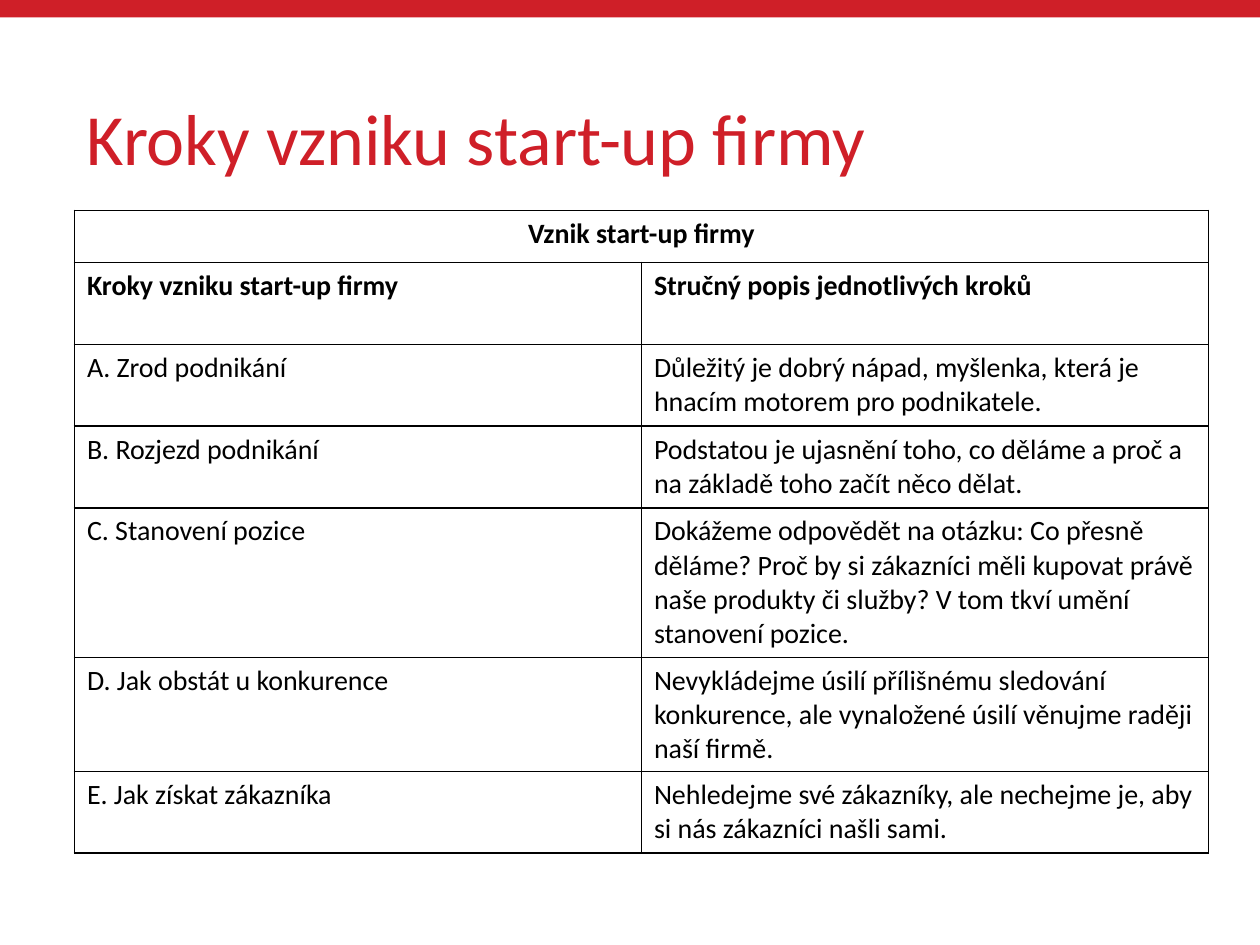
from lxml.etree import SubElement
from pptx import Presentation
from pptx.dml.color import RGBColor
from pptx.enum.shapes import MSO_SHAPE
from pptx.enum.text import MSO_ANCHOR, PP_ALIGN
from pptx.oxml.ns import qn
from pptx.util import Cm, Pt

RED = RGBColor(0xCF, 0x1F, 0x28)
BLACK = RGBColor(0, 0, 0)
WHITE = RGBColor(0xFF, 0xFF, 0xFF)

TABLE_TITLE = "Vznik start-up firmy"
HEADINGS = ("Kroky vzniku start-up firmy", "Stručný popis jednotlivých kroků")
STEPS = [
    ("A. Zrod podnikání",
     "Důležitý je dobrý nápad, myšlenka, která je hnacím motorem pro podnikatele."),
    ("B. Rozjezd podnikání",
     "Podstatou je ujasnění toho, co děláme a proč a na základě toho začít něco dělat."),
    ("C. Stanovení pozice",
     "Dokážeme odpovědět na otázku: Co přesně děláme? Proč by si zákazníci měli kupovat "
     "právě naše produkty či služby? V tom tkví umění stanovení pozice."),
    ("D. Jak obstát u konkurence",
     "Nevykládejme úsilí přílišnému sledování konkurence, ale vynaložené úsilí věnujme "
     "raději naší firmě."),
    ("E. Jak získat zákazníka",
     "Nehledejme své zákazníky, ale nechejme je, aby si nás zákazníci našli sami."),
]
ROW_HEIGHTS = [1.05] + [1.65] * 3 + [3.01, 2.3, 1.65]


def write(frame, text, size=16, color=BLACK, bold=False,
          align=PP_ALIGN.LEFT, spacing=None):
    paragraph = frame.paragraphs[0]
    paragraph.alignment = align
    if spacing:
        paragraph.line_spacing = spacing
    run = paragraph.add_run()
    run.text = text
    run.font.name = "Calibri"
    run.font.size = Pt(size)
    run.font.bold = bold
    run.font.color.rgb = color


class StartupSlide:
    def __init__(self, deck, accent=RED, border=BLACK):
        self.slide = deck.slides.add_slide(deck.slide_layouts[6])
        self.accent = accent
        self.border = border

    def band(self, width, height):
        band = self.slide.shapes.add_shape(MSO_SHAPE.RECTANGLE, 0, 0, width, height)
        band.shadow.inherit = False
        band.fill.solid()
        band.fill.fore_color.rgb = self.accent
        band.line.fill.background()

    def title(self, text, left, top, width, height):
        frame = self.slide.shapes.add_textbox(left, top, width, height).text_frame
        frame.word_wrap = True
        frame.vertical_anchor = MSO_ANCHOR.MIDDLE
        write(frame, text, size=41.2, color=self.accent, spacing=0.9)

    def style_cell(self, cell):
        properties = cell._tc.get_or_add_tcPr()
        for side in ("lnL", "lnR", "lnT", "lnB"):
            line = SubElement(properties, qn(f"a:{side}"), w=str(Pt(1)))
            fill = SubElement(line, qn("a:solidFill"))
            SubElement(fill, qn("a:srgbClr"), val=str(self.border))
        cell.fill.solid()
        cell.fill.fore_color.rgb = WHITE

    def table(self, heading, rows, left, top, width, heights):
        table = self.slide.shapes.add_table(
            len(rows) + 1, 2, left, top, width, Cm(sum(heights))).table
        table.first_row = table.horz_banding = False
        for row, height in zip(table.rows, heights):
            row.height = Cm(height)
        for cell in table.iter_cells():
            self.style_cell(cell)

        # Heading across both columns
        table.cell(0, 0).merge(table.cell(0, 1))
        write(table.cell(0, 0).text_frame, heading, bold=True, align=PP_ALIGN.CENTER)

        # Column headings, then the steps
        for r, texts in enumerate(rows, start=1):
            for c, text in enumerate(texts):
                write(table.cell(r, c).text_frame, text, bold=r == 1)


def main():
    deck = Presentation()
    deck.slide_width, deck.slide_height = Cm(25.4), Cm(19.05)
    page = StartupSlide(deck)

    # Top band and title
    page.band(deck.slide_width, Cm(0.35))
    page.title("Kroky vzniku start-up firmy", Cm(1.5), Cm(1.02), Cm(22.4), Cm(3.68))

    # Steps table
    page.table(TABLE_TITLE, [HEADINGS, *STEPS], Cm(1.5), Cm(4.24), Cm(22.86), ROW_HEIGHTS)

    deck.save("out.pptx")


if __name__ == "__main__":
    main()
